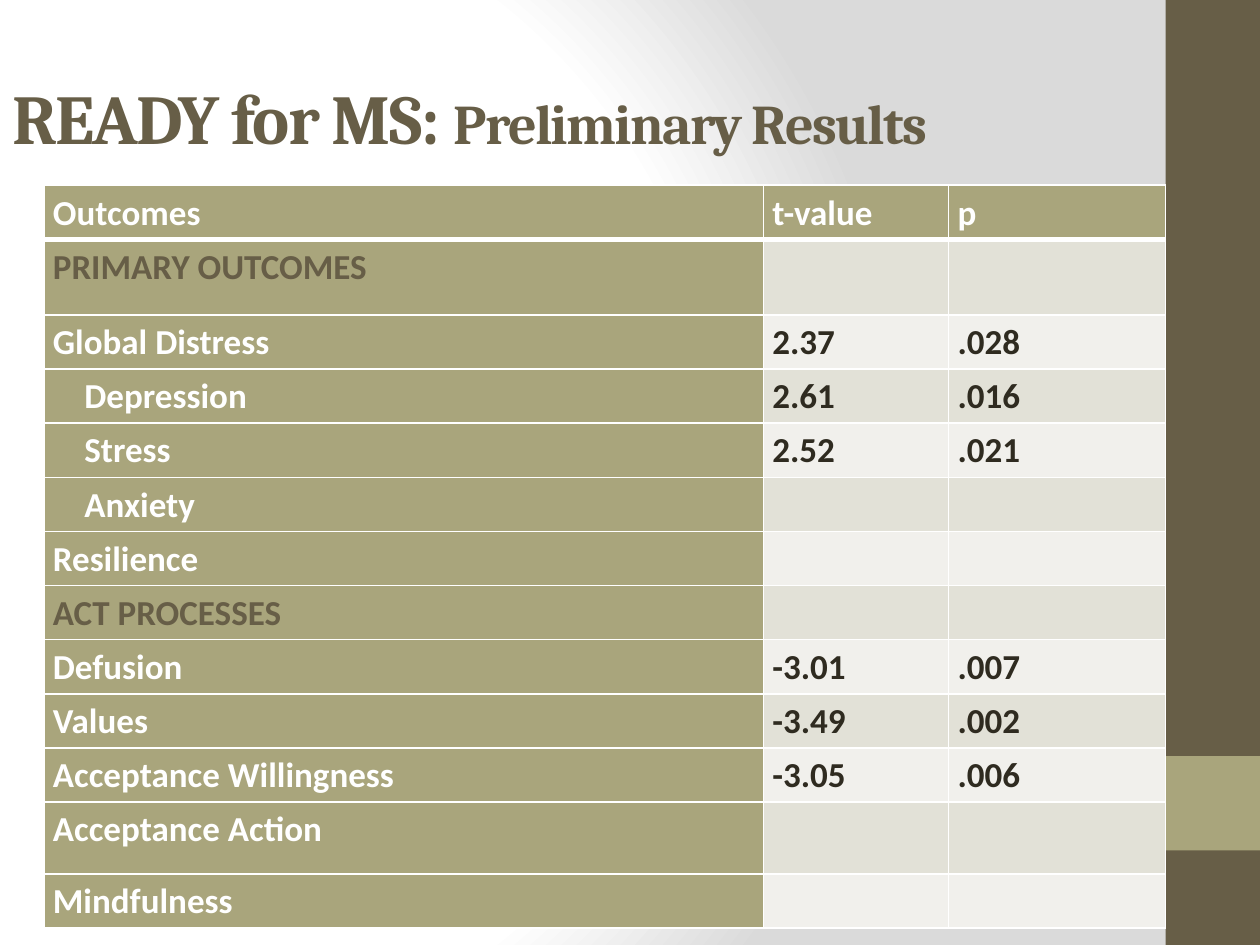
from lxml.etree import SubElement
from pptx import Presentation
from pptx.dml.color import RGBColor as Rgb
from pptx.enum.shapes import MSO_SHAPE as Shape
from pptx.enum.text import MSO_ANCHOR as Anchor
from pptx.oxml import parse_xml
from pptx.oxml.ns import nsdecls, qn
from pptx.util import Inches, Pt

WIDTH, HEIGHT = Inches(10), Inches(7.5)
COLORS = {
    "brown": "675E47", "olive": "A9A57C", "ink": "2F2B20", "white": "FFFFFF",
    "grey": "DADADA", "band": "E2E1D7", "light": "F1F0EC",
}
COLUMN_SHARES = (0.571, 0.147, 0.172)
ROW_SHARE = 0.0573
TALL_ROWS = {1: 0.08, 11: 0.076}
SECTIONS = ("PRIMARY OUTCOMES", "ACT PROCESSES")
SUBSCALES = ("Depression", "Stress", "Anxiety")
RESULTS = (
    ("Outcomes", "t-value", "p"),
    ("PRIMARY OUTCOMES", "", ""),
    ("Global Distress", "2.37", ".028"),
    ("Depression", "2.61", ".016"),
    ("Stress", "2.52", ".021"),
    ("Anxiety", "", ""),
    ("Resilience", "", ""),
    ("ACT PROCESSES", "", ""),
    ("Defusion", "-3.01", ".007"),
    ("Values", "-3.49", ".002"),
    ("Acceptance Willingness", "-3.05", ".006"),
    ("Acceptance Action", "", ""),
    ("Mindfulness", "", ""),
)


def color(name):
    """Return the named colour."""
    return Rgb.from_string(COLORS[name])


def place(left, top, width, height):
    """Turn shares of the slide into a position and size."""
    return (int(left * WIDTH), int(top * HEIGHT),
            int(width * WIDTH), int(height * HEIGHT))


def style_font(font, family, size, name):
    """Set a bold font with its family, size and colour."""
    font.name, font.size, font.bold = family, Pt(size), True
    font.color.rgb = color(name)


def paint_background(page):
    """Fill the page with a circular white to grey gradient."""
    page.background.fill.solid()
    holder = page.element.find(".//" + qn("p:bgPr"))
    stops = "".join(
        f'<a:gs pos="{share * 1000}"><a:srgbClr val="{COLORS[name]}"/></a:gs>'
        for share, name in ((0, "white"), (75, "white"), (100, "grey")))
    gradient = parse_xml(
        f'<a:gradFill {nsdecls("a")} rotWithShape="1"><a:gsLst>{stops}</a:gsLst>'
        '<a:path path="circle"><a:fillToRect l="20000" t="50000" r="100000" '
        'b="50000"/></a:path></a:gradFill>')
    holder.replace(holder.find(qn("a:solidFill")), gradient)


def add_block(page, name, *shares):
    """Add a plain filled rectangle."""
    block = page.shapes.add_shape(Shape.RECTANGLE, *place(*shares))
    block.shadow.inherit = False
    block.fill.solid()
    block.fill.fore_color.rgb = color(name)
    block.line.fill.background()


def add_title(page, parts, *shares):
    """Add a title line made of (text, size) parts."""
    box = page.shapes.add_textbox(*place(*shares))
    frame = box.text_frame
    frame.word_wrap = True
    frame.vertical_anchor = Anchor.MIDDLE
    for text, size in parts:
        span = frame.paragraphs[0].add_run()
        span.text = text
        style_font(span.font, "Cambria", size, "brown")
        span.font._element.set("spc", "-100")


def add_borders(cell, row):
    """Draw white cell borders, with a thick rule under the header."""
    widths = {"L": 1, "R": 1, "T": 3 if row == 1 else 1, "B": 3 if row == 0 else 1}
    properties = cell._tc.get_or_add_tcPr()
    for side, width in widths.items():
        line = SubElement(properties, qn(f"a:ln{side}"), w=str(Pt(width)))
        fill = SubElement(line, qn("a:solidFill"))
        SubElement(fill, qn("a:srgbClr"), val=COLORS["white"])


def fill_cell(cell, text, row, column):
    """Write and style one cell of the results table."""
    label = row == 0 or column == 0
    cell.margin_left = cell.margin_right = Inches(0.07)
    cell.margin_top = cell.margin_bottom = 0
    add_borders(cell, row)
    cell.fill.solid()
    cell.fill.fore_color.rgb = color(
        "olive" if label else "band" if row % 2 else "light")
    para = cell.text_frame.paragraphs[0]
    para.text = text
    para.line_spacing = 1.15
    name = "brown" if text in SECTIONS else "white" if label else "ink"
    for span in para.runs:
        style_font(span.font, "Calibri", 20, name)
    if text in SUBSCALES:
        para._p.get_or_add_pPr().set("marL", str(Inches(0.25)))


def add_results(page, left, top):
    """Add the results table."""
    heights = [TALL_ROWS.get(row, ROW_SHARE) for row in range(len(RESULTS))]
    area = place(left, top, sum(COLUMN_SHARES), sum(heights))
    table = page.shapes.add_table(len(RESULTS), len(COLUMN_SHARES), *area).table
    for column, share in zip(table.columns, COLUMN_SHARES):
        column.width = int(share * WIDTH)
    for line, share in zip(table.rows, heights):
        line.height = int(share * HEIGHT)
    for row, values in enumerate(RESULTS):
        for column, text in enumerate(values):
            fill_cell(table.cell(row, column), text, row, column)


def main():
    """Build and save the slide."""
    deck = Presentation()
    deck.slide_width, deck.slide_height = WIDTH, HEIGHT
    page = deck.slides.add_slide(deck.slide_layouts[6])
    paint_background(page)
    add_block(page, "brown", 0.925, 0, 0.075, 1)
    add_block(page, "olive", 0.925, 0.8, 0.075, 0.1)
    add_title(page, (("READY for MS: ", 40), ("Preliminary Results", 32)),
              0, 0.04, 0.874, 0.167)
    add_results(page, 0.035, 0.196)
    deck.save("out.pptx")


if __name__ == "__main__":
    main()
